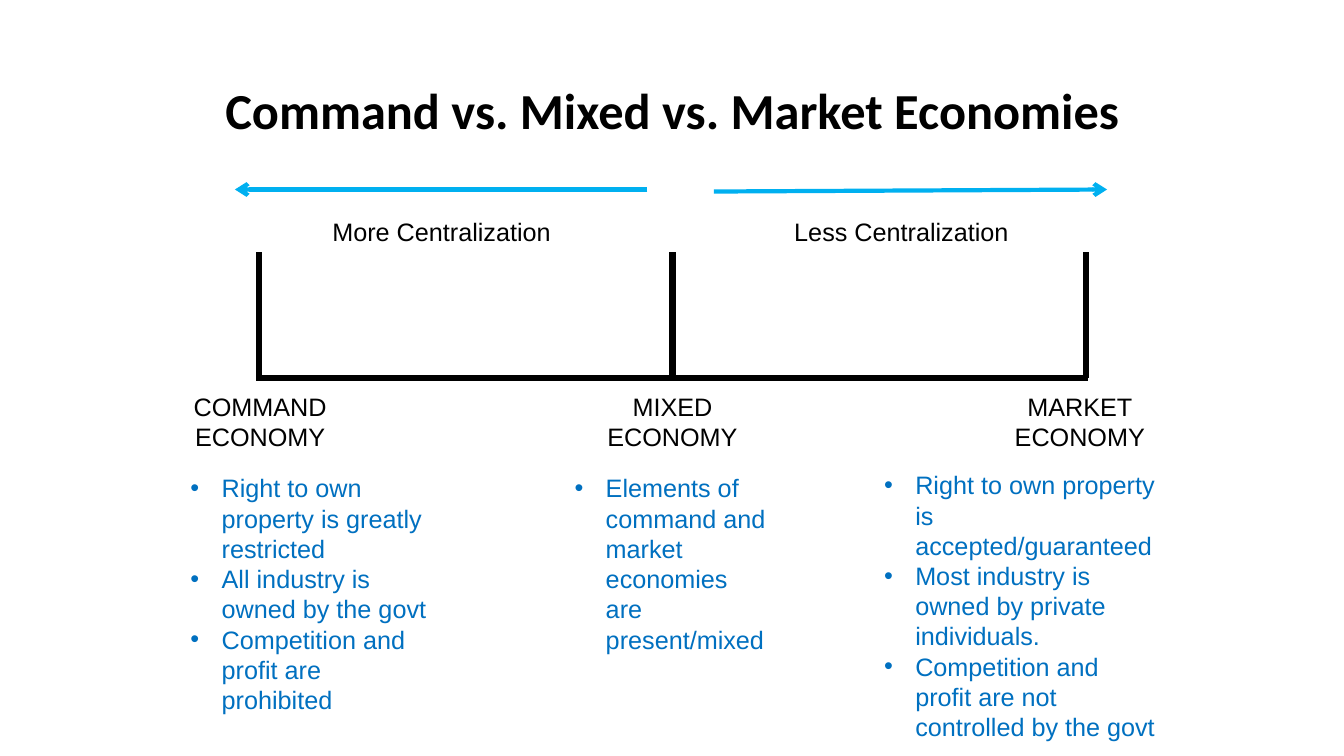
from dataclasses import dataclass

from lxml.etree import SubElement
from pptx import Presentation
from pptx.dml.color import RGBColor
from pptx.enum.shapes import MSO_CONNECTOR
from pptx.enum.text import MSO_ANCHOR, PP_ALIGN
from pptx.oxml.ns import qn
from pptx.util import Inches, Pt


@dataclass(frozen=True)
class Theme:
    ink: RGBColor = RGBColor(0, 0, 0)
    point: RGBColor = RGBColor(0x00, 0x70, 0xC0)
    arrow: RGBColor = RGBColor(0x00, 0xB0, 0xF0)
    head: str = "Calibri"
    body: str = "Arial"
    large: Pt = Pt(36)
    small: Pt = Pt(18)
    thick: Pt = Pt(4.5)
    thin: Pt = Pt(3)


class Board:
    def __init__(self, slide, theme):
        self.slide = slide
        self.theme = theme

    def text(self, box, lines, color=None):
        """Add a text box with one centred paragraph per line."""
        frame = self.slide.shapes.add_textbox(*map(Inches, box)).text_frame
        frame.word_wrap = True
        frame.text = "\n".join(lines)
        for para in frame.paragraphs:
            para.alignment = PP_ALIGN.CENTER
            para.font.name = self.theme.body
            para.font.size = self.theme.small
            para.font.color.rgb = color or self.theme.ink
        return frame

    def title(self, box, words):
        frame = self.text(box, [words])
        frame.vertical_anchor = MSO_ANCHOR.MIDDLE
        para = frame.paragraphs[0]
        para.line_spacing = 0.9
        para.font.name = self.theme.head
        para.font.size = self.theme.large
        para.font.bold = True

    def bullets(self, box, points):
        for para in self.text(box, points, self.theme.point).paragraphs:
            para.alignment = PP_ALIGN.LEFT
            props = para._p.get_or_add_pPr()
            props.set("marL", str(Inches(0.31)))
            props.set("indent", str(-Inches(0.31)))
            font = SubElement(props, qn("a:buFont"), typeface=self.theme.body)
            mark = SubElement(props, qn("a:buChar"), char="•")
            # Bullet marks must come before the default run properties
            props.insert(0, font)
            props.insert(1, mark)

    def line(self, start, end, color, width):
        ends = map(Inches, start + end)
        link = self.slide.shapes.add_connector(MSO_CONNECTOR.STRAIGHT, *ends)
        link.line.color.rgb = color
        link.line.width = width
        SubElement(link._element.spPr, qn("a:effectLst"))
        return link

    def bar(self, start, end):
        self.line(start, end, self.theme.ink, self.theme.thick)

    def arrow(self, start, end):
        link = self.line(start, end, self.theme.arrow, self.theme.thin)
        SubElement(link.line._get_or_add_ln(), qn("a:tailEnd"), type="arrow")


def main():
    deck = Presentation()
    deck.slide_width = Inches(13.33)
    deck.slide_height = Inches(7.5)
    board = Board(deck.slides.add_slide(deck.slide_layouts[6]), Theme())

    board.title((0.92, 0.4, 11.5, 1.45), "Command vs. Mixed vs. Market Economies")

    top, base = 2.5, 3.75
    board.bar((2.54, base), (10.79, base))
    for x in (2.57, 6.67, 10.77):
        board.bar((x, base), (x, top))

    board.arrow((6.42, 1.88), (2.33, 1.88))
    board.arrow((7.08, 1.9), (10.98, 1.88))
    for x, word in ((3.17, "More"), (7.73, "Less")):
        board.text((x, 2.1, 2.42, 0.4), [f"{word} Centralization"])

    for x, width, kind in (
        (1.54, 2.08, "COMMAND"),
        (5.46, 2.42, "MIXED"),
        (9.75, 1.92, "MARKET"),
    ):
        board.text((x, 3.83, width, 0.71), [kind, "ECONOMY"])

    board.bullets((1.79, 4.64, 2.58, 2.52), [
        "Right to own property is greatly restricted",
        "All industry is owned by the govt",
        "Competition and profit are prohibited",
    ])
    board.bullets((5.6, 4.64, 2.13, 1.92), [
        "Elements of command and market economies are present/mixed",
    ])
    board.bullets((8.67, 4.61, 2.94, 2.83), [
        "Right to own property is accepted/guaranteed",
        "Most industry is owned by private individuals.",
        "Competition and profit are not controlled by the govt",
    ])

    deck.save("out.pptx")


if __name__ == "__main__":
    main()
